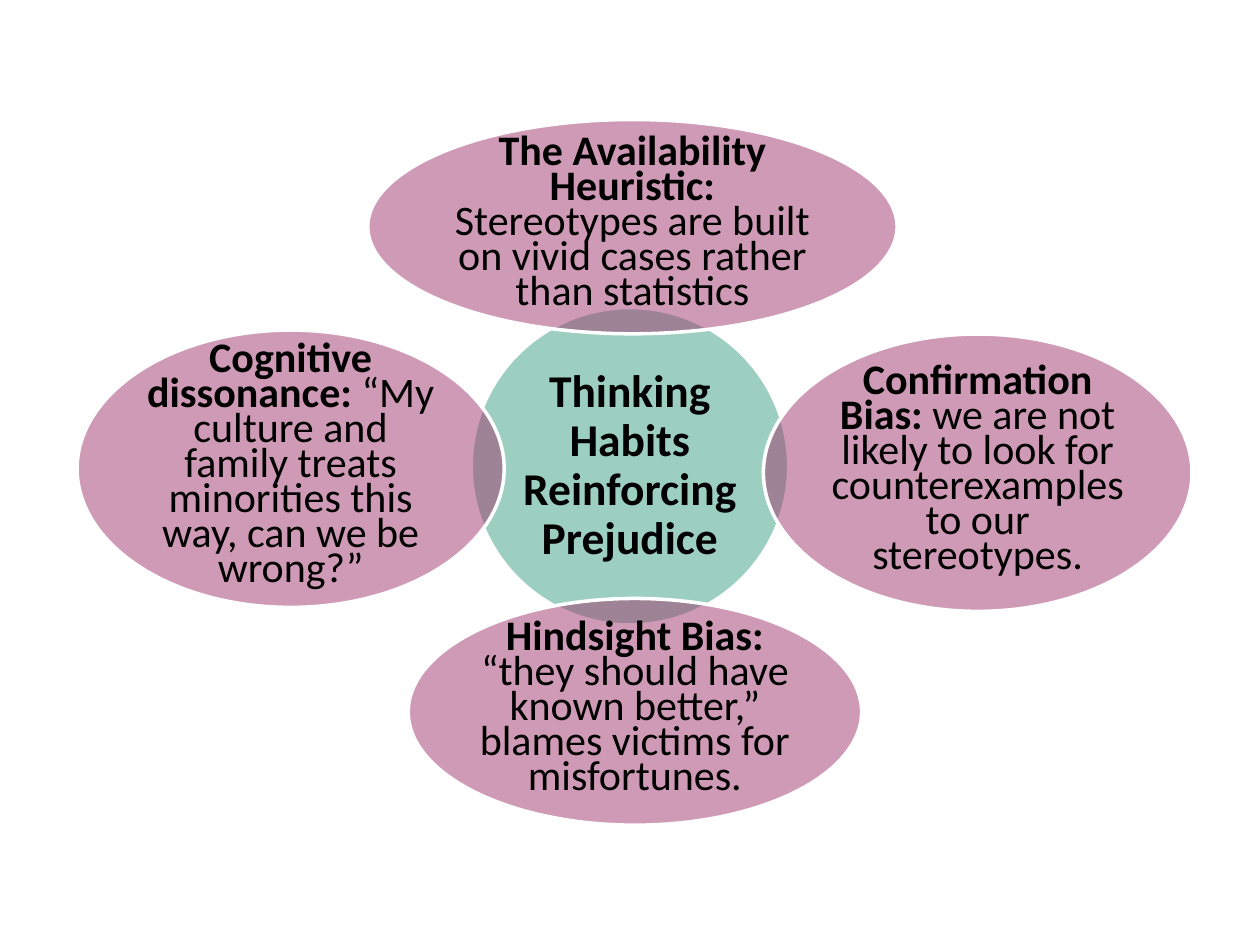
"""Build a slide of four thinking habits around the prejudice they reinforce."""
import pptx
import pptx.dml.color
import pptx.enum.shapes
import pptx.enum.text
import pptx.oxml
import pptx.oxml.ns
import pptx.util
from pptx.util import Cm, Pt

COLORS = {"hub": "3AA082", "habit": "A0366C", "outline": "FFFFFF", "text": "000000"}
OPACITY = 50
INSET = Cm(0.09)

HUB = {"lead": "Thinking Habits Reinforcing Prejudice", "detail": "",
       "center": (12.7, 9.4), "size": (6.4, 6.4)}
HABITS = [
    {"lead": "The Availability Heuristic:",
     "detail": "\nStereotypes are built on vivid cases rather than statistics",
     "center": (12.75, 4.57), "size": (10.67, 4.32)},
    {"lead": "Confirmation Bias:",
     "detail": " we are not likely to look for counterexamples to our stereotypes.",
     "center": (19.71, 9.53), "size": (8.64, 5.59)},
    {"lead": "Hindsight Bias: ",
     "detail": "“they should have known better,” blames victims for misfortunes.",
     "center": (12.8, 14.35), "size": (9.14, 4.57)},
    {"lead": "Cognitive dissonance: ",
     "detail": "“My culture and family treats minorities this way, can we be wrong?”",
     "center": (5.86, 9.45), "size": (8.61, 5.59)},
]


def rgb(name):
    return pptx.dml.color.RGBColor.from_string(COLORS[name])


def add_bubble(slide, topic, color, font_size, line_spacing):
    (x, y), (width, height) = topic["center"], topic["size"]
    bubble = slide.shapes.add_shape(
        pptx.enum.shapes.MSO_SHAPE.OVAL,
        Cm(x - width / 2), Cm(y - height / 2), Cm(width), Cm(height))
    bubble.shadow.inherit = False
    bubble.fill.solid()
    bubble.fill.fore_color.rgb = rgb(color)
    fill_color = bubble.fill._xPr.find(".//" + pptx.oxml.ns.qn("a:srgbClr"))
    alpha = pptx.oxml.parse_xml(
        f'<a:alpha {pptx.oxml.ns.nsdecls("a")} val="{OPACITY * 1000}"/>')
    fill_color.append(alpha)
    bubble.line.color.rgb = rgb("outline")
    bubble.line.width = Pt(2)

    frame = bubble.text_frame
    frame.word_wrap = True
    frame.vertical_anchor = pptx.enum.text.MSO_ANCHOR.MIDDLE
    frame.margin_left = frame.margin_right = INSET
    frame.margin_top = frame.margin_bottom = INSET
    paragraph = frame.paragraphs[0]
    paragraph.alignment = pptx.enum.text.PP_ALIGN.CENTER
    paragraph.line_spacing = line_spacing
    paragraph.font.name = "Calibri"
    paragraph.font.size = Pt(font_size)
    paragraph.font.color.rgb = rgb("text")
    lead = paragraph.add_run()
    lead.text = topic["lead"]
    lead.font.bold = True
    if topic["detail"].startswith("\n"):
        paragraph.add_line_break()
    if topic["detail"]:
        paragraph.add_run().text = topic["detail"].lstrip("\n")


def main():
    deck = pptx.Presentation()
    deck.slide_width, deck.slide_height = Cm(25.4), Cm(19.05)
    slide = deck.slides.add_slide(deck.slide_layouts[6])
    add_bubble(slide, HUB, "hub", 26, 0.9)
    for habit in HABITS:
        add_bubble(slide, habit, "habit", 24, Pt(20))
    deck.save("out.pptx")


if __name__ == "__main__":
    main()
